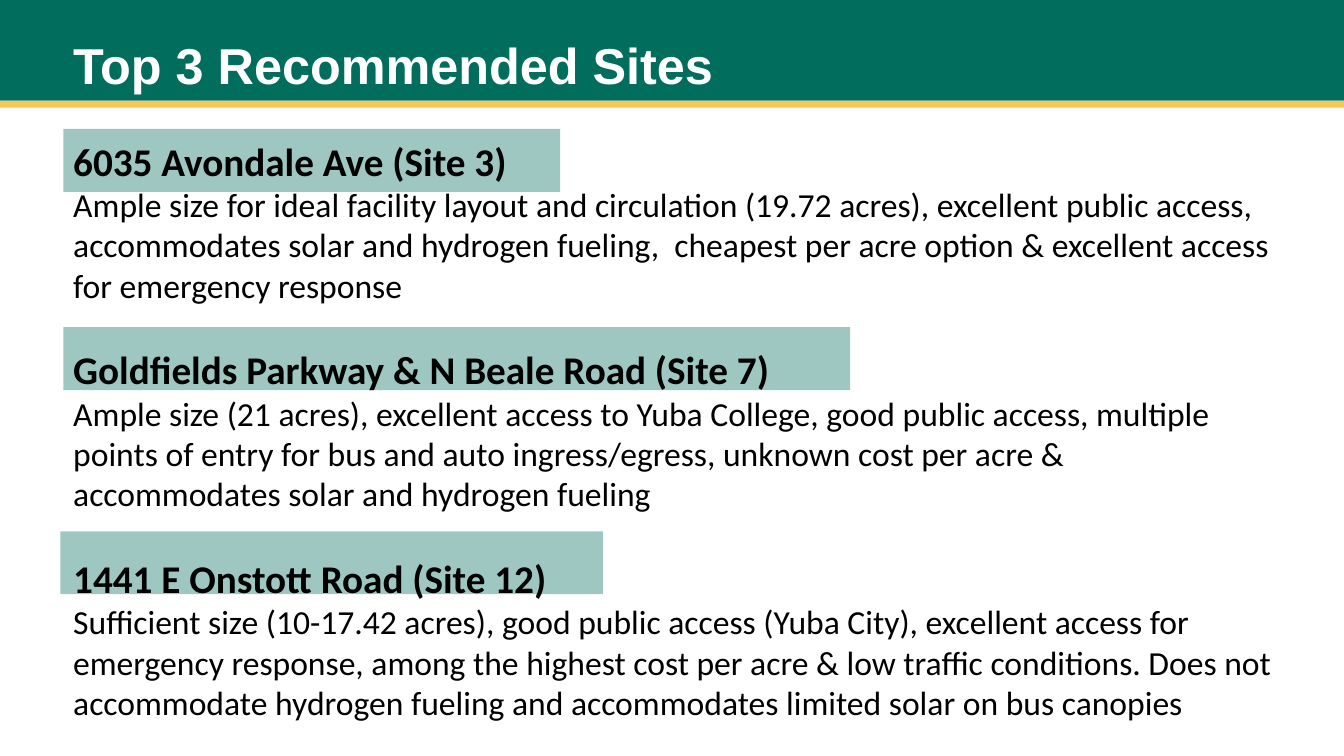
from lxml import etree
from pptx import Presentation
from pptx.dml.color import RGBColor
from pptx.enum import shapes, text
from pptx.oxml import ns
from pptx.util import Pt

GREEN = RGBColor(0x00, 0x6D, 0x5D)
GOLD = RGBColor(0xF9, 0xC7, 0x53)
WHITE = RGBColor(0xFF, 0xFF, 0xFF)
BLACK = RGBColor(0x00, 0x00, 0x00)

PAGE_WIDTH, PAGE_HEIGHT = 960, 540
MARGIN = 45.2
HIGHLIGHT_HEIGHT = 45
HIGHLIGHT_OPACITY = 38
SITE_GAP = 29

# Heading, description, and the left, top and width of the heading's highlight
SITES = [
    ("6035 Avondale Ave (Site 3)",
     "Ample size for ideal facility layout and circulation (19.72 acres), "
     "excellent public access, accommodates solar and hydrogen fueling,  "
     "cheapest per acre option & excellent access for emergency response",
     (MARGIN, 92, 355)),
    ("Goldfields Parkway & N Beale Road (Site 7)",
     "Ample size (21 acres), excellent access to Yuba College, good public "
     "access, multiple points of entry for bus and auto ingress/egress, "
     "unknown cost per acre & accommodates solar and hydrogen fueling",
     (MARGIN, 233.7, 562)),
    ("1441 E Onstott Road (Site 12)",
     "Sufficient size (10-17.42 acres), good public access (Yuba City), "
     "excellent access for emergency response, among the highest cost per "
     "acre & low traffic conditions. Does not accommodate hydrogen fueling "
     "and accommodates limited solar on bus canopies",
     (43.2, 379.5, 387.5)),
]


def add_bar(page, left, top, width, height, color, opacity=100):
    bar = page.shapes.add_shape(shapes.MSO_SHAPE.RECTANGLE,
                                Pt(left), Pt(top), Pt(width), Pt(height))
    bar.shadow.inherit = False
    bar.line.fill.background()
    bar.fill.solid()
    bar.fill.fore_color.rgb = color
    if opacity < 100:
        shade = bar._element.spPr.find(".//" + ns.qn("a:srgbClr"))
        etree.SubElement(shade, ns.qn("a:alpha"), val=str(opacity * 1000))


def add_text_box(page, left, top, width, height, anchor):
    box = page.shapes.add_textbox(Pt(left), Pt(top), Pt(width), Pt(height))
    box.text_frame.word_wrap = True
    box.text_frame.vertical_anchor = anchor
    return box.text_frame


def write(para, words, size, font="Calibri", color=BLACK, bold=False,
          space_before=0, line_spacing=1.0):
    para.space_before = Pt(space_before)
    para.line_spacing = line_spacing
    span = para.add_run()
    span.text = words
    span.font.name = font
    span.font.size = Pt(size)
    span.font.bold = bold
    span.font.color.rgb = color


def add_header(page, left, top, width, height):
    """Green title band with a gold rule beneath it."""
    add_bar(page, left, top, width, height, GREEN)
    add_bar(page, left, top + height, width, 5, GOLD)
    frame = add_text_box(page, left + MARGIN, top, 720, height,
                         text.MSO_ANCHOR.BOTTOM)
    write(frame.paragraphs[0], "Top 3 Recommended Sites", 36, font="Arial",
          color=WHITE, bold=True, line_spacing=0.9)


def add_sites(page, left, top, width, height):
    """One flowing list of sites over the highlights of their headings."""
    for _, _, (bar_left, bar_top, bar_width) in SITES:
        add_bar(page, bar_left, bar_top, bar_width, HIGHLIGHT_HEIGHT,
                GREEN, opacity=HIGHLIGHT_OPACITY)
    frame = add_text_box(page, left, top, width, height, text.MSO_ANCHOR.TOP)
    for index, (heading, description, _) in enumerate(SITES):
        para = frame.add_paragraph() if index else frame.paragraphs[0]
        write(para, heading, 28, bold=True,
              space_before=SITE_GAP if index else 0)
        write(frame.add_paragraph(), description, 24)


def main():
    deck = Presentation()
    deck.slide_width, deck.slide_height = Pt(PAGE_WIDTH), Pt(PAGE_HEIGHT)
    page = deck.slides.add_slide(deck.slide_layouts[6])
    add_header(page, 0, 0, PAGE_WIDTH, 72)
    add_sites(page, MARGIN, 94.3, 874, 429)
    deck.save("out.pptx")


if __name__ == "__main__":
    main()
